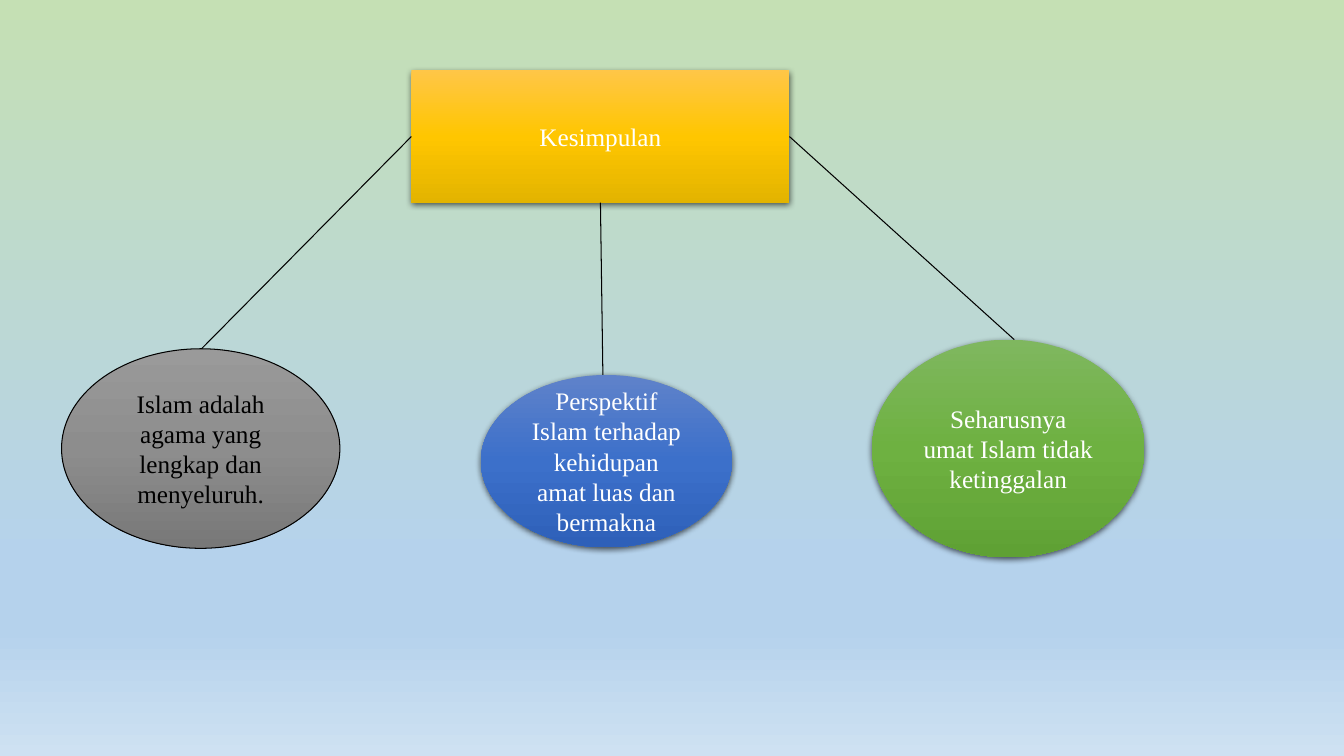
import dataclasses

import lxml.etree
import pptx
import pptx.dml.color
import pptx.enum.shapes
import pptx.enum.text
import pptx.oxml.ns
import pptx.util

SHAPES = pptx.enum.shapes.MSO_SHAPE
WIDTH = pptx.util.Inches(13.33)
HEIGHT = pptx.util.Inches(7.5)


@dataclasses.dataclass(frozen=True)
class Theme:
    font: str = "Times New Roman"
    size: int = 18
    line_width: float = 0.75
    black: str = "000000"
    white: str = "FFFFFF"
    sky: tuple = ((0, "C5E0B4"), (74, "B5D2EC"), (83, "B5D2EC"), (100, "CEE1F2"))
    gold: tuple = ((0, "FFC647"), (50, "FFC600"), (100, "E3B400"))
    grey: tuple = ((0, "9A9A9A"), (50, "8D8D8D"), (100, "787878"))
    blue: tuple = ((0, "5F82CA"), (50, "3C70CA"), (100, "2E60B9"))
    green: tuple = ((0, "7FB75F"), (50, "6EB141"), (100, "5FA134"))


THEME = Theme()


def across(percent):
    return round(WIDTH * percent / 100)


def down(percent):
    return round(HEIGHT * percent / 100)


def rgb(color):
    return pptx.dml.color.RGBColor.from_string(color)


def add_xml(parent, tag, **attributes):
    return lxml.etree.SubElement(parent, pptx.oxml.ns.qn(tag), attributes)


def fill_gradient(fill, element, stops):
    fill.gradient()
    fill.gradient_angle = 270
    stop_list = next(element.iter(pptx.oxml.ns.qn("a:gsLst")))
    for stop in list(stop_list):
        stop_list.remove(stop)
    for position, color in stops:
        stop = add_xml(stop_list, "a:gs", pos=str(position * 1000))
        add_xml(stop, "a:srgbClr", val=color)


def add_shadow(shape):
    effects = shape._element.spPr.find(pptx.oxml.ns.qn("a:effectLst"))
    shadow = add_xml(effects, "a:outerShdw", blurRad=str(pptx.util.Pt(4.5)),
                     dist=str(pptx.util.Pt(1.5)), dir="5400000",
                     algn="ctr", rotWithShape="0")
    color = add_xml(shadow, "a:srgbClr", val=THEME.black)
    add_xml(color, "a:alpha", val="63000")


def style_line(line):
    line.color.rgb = rgb(THEME.black)
    line.width = pptx.util.Pt(THEME.line_width)


def add_node(s, kind, box, text, stops, outlined=False):
    left, top, width, height = box
    sp = s.shapes.add_shape(kind, across(left), down(top), across(width), down(height))
    sp.shadow.inherit = False
    fill_gradient(sp.fill, sp._element, stops)
    if outlined:
        style_line(sp.line)
    else:
        sp.line.fill.background()
        add_shadow(sp)
    tf = sp.text_frame
    tf.text = text
    tf.word_wrap = True
    tf.vertical_anchor = pptx.enum.text.MSO_ANCHOR.MIDDLE
    p = tf.paragraphs[0]
    p.alignment = pptx.enum.text.PP_ALIGN.CENTER
    r = p.runs[0]
    r.font.name = THEME.font
    r.font.size = pptx.util.Pt(THEME.size)
    r.font.color.rgb = rgb(THEME.black if outlined else THEME.white)
    return sp


def add_branch(s, start, end):
    line = s.shapes.add_connector(pptx.enum.shapes.MSO_CONNECTOR.STRAIGHT, *start, *end)
    style_line(line.line)
    add_xml(line._element.spPr, "a:effectLst")


def main():
    prs = pptx.Presentation()
    prs.slide_width, prs.slide_height = WIDTH, HEIGHT
    s = prs.slides.add_slide(prs.slide_layouts[6])
    fill_gradient(s.background.fill, s._element, THEME.sky)

    root = add_node(s, SHAPES.RECTANGLE, (30.61, 9.33, 28.13, 17.47),
                    "Kesimpulan", THEME.gold)
    middle = root.top + root.height // 2
    starts = (
        (root.left, middle),
        (root.left + root.width // 2, root.top + root.height),
        (root.left + root.width, middle),
    )
    conclusions = (
        ((4.58, 46.13, 20.71, 26.4), 15,
         "Islam adalah agama yang lengkap dan menyeluruh.", THEME.grey, True),
        ((35.78, 49.6, 18.68, 22.8), 44.86,
         "Perspektif Islam terhadap kehidupan amat luas dan bermakna", THEME.blue, False),
        ((64.89, 44.93, 20.26, 28.8), 75.47,
         "Seharusnya umat Islam tidak ketinggalan", THEME.green, False),
    )
    for start, (box, end, *_) in zip(starts, conclusions):
        add_branch(s, start, (across(end), down(box[1])))
    for box, _, text, stops, outlined in conclusions:
        add_node(s, SHAPES.OVAL, box, text, stops, outlined)
    prs.save("out.pptx")


if __name__ == "__main__":
    main()
